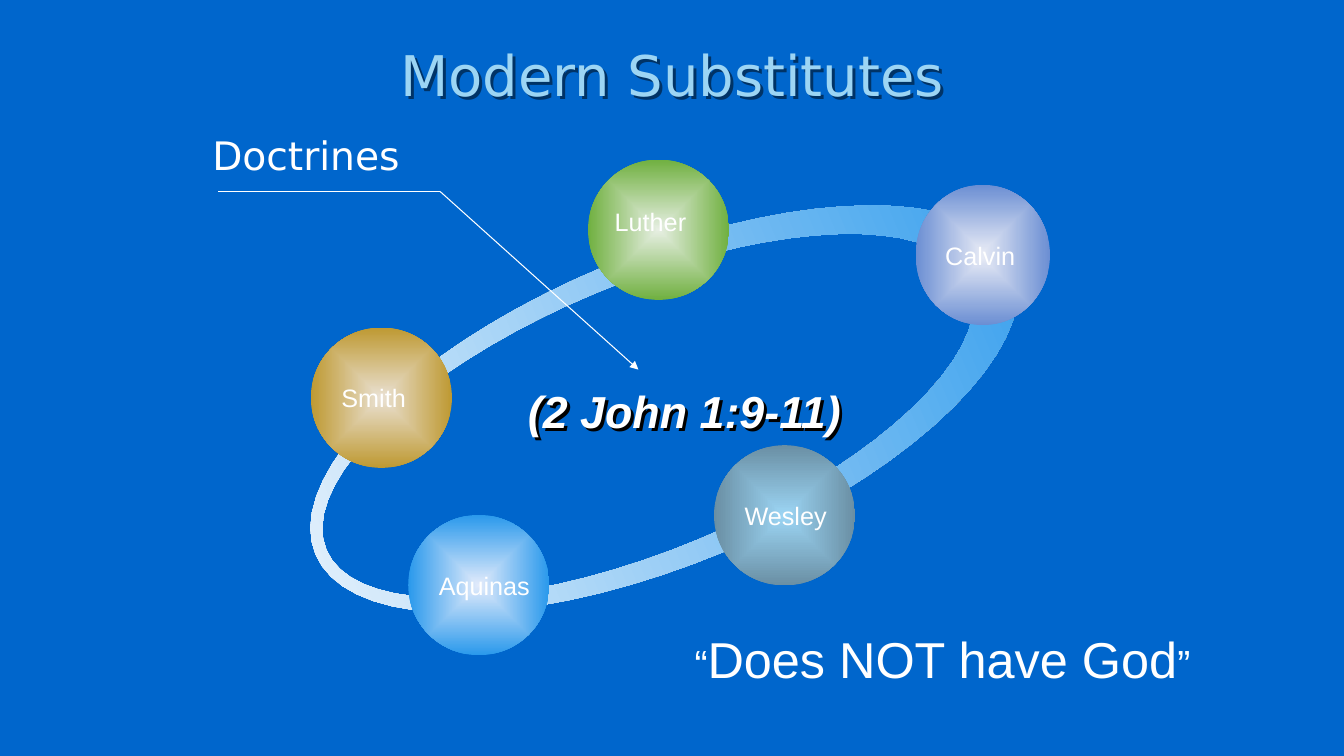
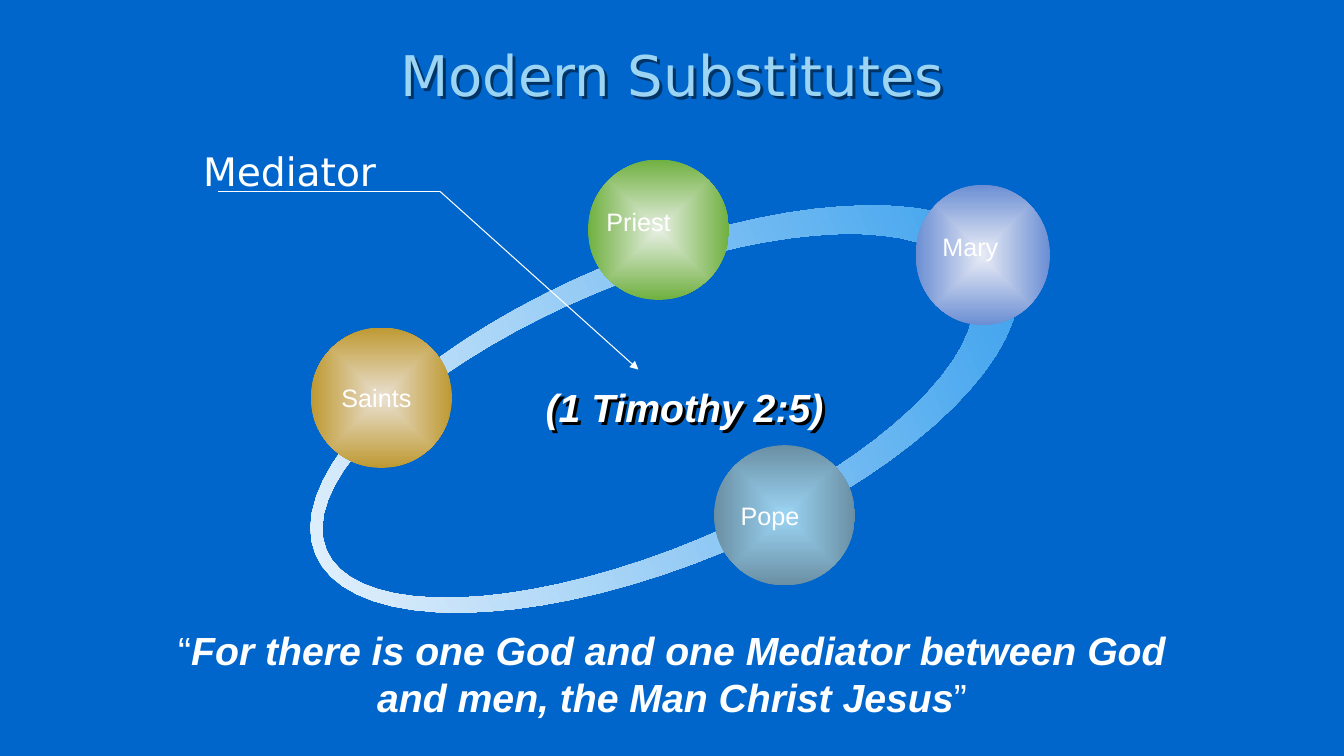
from collections import namedtuple
from math import cos, pi, sin

from lxml import etree
from pptx import Presentation
from pptx.dml.color import RGBColor
from pptx.enum.shapes import MSO_CONNECTOR, MSO_SHAPE
from pptx.enum.text import MSO_ANCHOR, MSO_AUTO_SIZE, PP_ALIGN
from pptx.oxml.ns import qn
from pptx.util import Inches, Pt

LEFT, CENTER = PP_ALIGN.LEFT, PP_ALIGN.CENTER
MIDDLE = MSO_ANCHOR.MIDDLE
GROW = MSO_AUTO_SIZE.SHAPE_TO_FIT_TEXT
OVAL = MSO_SHAPE.OVAL
STRAIGHT = MSO_CONNECTOR.STRAIGHT

COLUMNS, ROWS = 160, 90
SLIDE_WIDTH, SLIDE_HEIGHT = Inches(13.33), Inches(7.5)
TITLE_ONLY = 5
TITLE_FONT, TEXT_FONT = "DejaVu Sans", "Arial"

BACKGROUND = RGBColor(0x00, 0x66, 0xCC)
TITLE_COLOR = RGBColor(0x9C, 0xD5, 0xF4)
TITLE_SHADOW = RGBColor(0x00, 0x33, 0x66)
WHITE = RGBColor(0xFF, 0xFF, 0xFF)
BLACK = RGBColor(0x00, 0x00, 0x00)
RING_LIGHT = RGBColor(0xF4, 0xF8, 0xFD)
SKY = RGBColor(0x2A, 0x99, 0xEC)
GREEN_LIGHT, GREEN = RGBColor(0xE7, 0xEF, 0xE3), RGBColor(0x70, 0xB0, 0x40)
GOLD_LIGHT, GOLD = RGBColor(0xEA, 0xE1, 0xD3), RGBColor(0xBE, 0x99, 0x32)
SKY_LIGHT = RGBColor(0xE2, 0xEB, 0xFB)
STEEL_LIGHT, STEEL = RGBColor(0x9C, 0xD5, 0xF4), RGBColor(0x6A, 0x8F, 0xA4)
VIOLET_LIGHT, VIOLET = RGBColor(0xE6, 0xEA, 0xF5), RGBColor(0x6B, 0x8E, 0xD3)

Sphere = namedtuple("Sphere", "column row width light dark")
TOP = Sphere(70, 19, 16.8, GREEN_LIGHT, GREEN)
WEST = Sphere(37, 39, 16.8, GOLD_LIGHT, GOLD)
SOUTH = Sphere(48.6, 61.3, 16.8, SKY_LIGHT, SKY)
EAST = Sphere(85, 53, 16.8, STEEL_LIGHT, STEEL)
NORTH_EAST = Sphere(109, 22, 16, VIOLET_LIGHT, VIOLET)
SPHERE_HEIGHT = 16.7

RING_CENTER = (79.1, 48.7)
RING_OUTER, RING_INNER = (45, 18.4), (41.5, 15.9)
RING_HOLE_SHIFT = -2.1
RING_ROTATION = 337.4
RING_STEPS = 72


def across(columns):
    """Turn grid columns into a length."""
    return int(SLIDE_WIDTH * columns / COLUMNS)


def down(rows):
    """Turn grid rows into a length."""
    return int(SLIDE_HEIGHT * rows / ROWS)


def grid_box(column, row, width, height):
    """Turn a grid cell range into left, top, width and height."""
    return across(column), down(row), across(width), down(height)


def style_font(font, size, color=WHITE, name=TEXT_FONT, strong=False):
    """Set size, colour and face; strong text is bold and italic."""
    font.name, font.size = name, Pt(size)
    font.bold = font.italic = strong
    font.color.rgb = color


def cast_shadow(shape, color):
    """Give the text of an unfilled shape a hard diagonal shadow."""
    effects = etree.SubElement(shape._element.spPr, qn("a:effectLst"))
    shadow = etree.SubElement(effects, qn("a:outerShdw"), dist="38100", dir="2700000",
                              algn="ctr", rotWithShape="0")
    etree.SubElement(shadow, qn("a:srgbClr"), val=str(color))


def fill_gradient(shape, light, dark):
    """Fill a shape from light to dark, left to right, without outline."""
    shape.shadow.inherit = False
    shape.line.fill.background()
    shape.fill.gradient()
    shape.fill.gradient_angle = 0
    for stop, color, position in zip(shape.fill.gradient_stops, (light, dark), (0, 1)):
        stop.color.rgb = color
        stop.position = position


def add_title(page, text):
    """Fill the title placeholder."""
    title = page.shapes.title
    title.text_frame.text = text
    title.text_frame.vertical_anchor = MIDDLE
    para = title.text_frame.paragraphs[0]
    para.alignment = CENTER
    style_font(para.font, 40, TITLE_COLOR, TITLE_FONT)
    cast_shadow(title, TITLE_SHADOW)


def add_label(page, text, box, size=18, name=TEXT_FONT, align=LEFT, strong=False, wrap=True):
    """Add a one-style text box and return it."""
    label = page.shapes.add_textbox(*grid_box(*box))
    frame = label.text_frame
    frame.word_wrap, frame.auto_size = wrap, GROW
    para = frame.paragraphs[0]
    para.text, para.alignment = text, align
    style_font(para.font, size, name=name, strong=strong)
    return label


def add_quote(page, text, box, size, align=LEFT, strong=False):
    """Add a quotation whose marks stay small and plain."""
    para = add_label(page, "", box, size, align=align).text_frame.paragraphs[0]
    for part, part_size, part_strong in (("“", 28, False), (text, size, strong), ("”", 28, False)):
        span = para.add_run()
        span.text = part
        style_font(span.font, part_size, strong=part_strong)


def ellipse_points(radii, shift=0):
    """List the points of an ellipse around the ring's centre."""
    column, row = RING_CENTER
    angles = [2 * pi * step / RING_STEPS for step in range(RING_STEPS)]
    return [(across(column + shift + radii[0] * cos(angle)), down(row + radii[1] * sin(angle)))
            for angle in angles]


def add_ring(page):
    """Add the tilted ring that widens to the right."""
    outer = ellipse_points(RING_OUTER)
    inner = ellipse_points(RING_INNER, RING_HOLE_SHIFT)[::-1]
    builder = page.shapes.build_freeform(*outer[0], scale=1.0)
    builder.add_line_segments(outer[1:], close=True)
    builder.move_to(*inner[0])
    builder.add_line_segments(inner[1:], close=True)
    ring = builder.convert_to_shape()
    fill_gradient(ring, RING_LIGHT, SKY)
    ring.rotation = RING_ROTATION


def add_sphere(page, sphere, text=""):
    """Add a ball shaded from its centre, with an optional name."""
    ball = page.shapes.add_shape(
        OVAL, *grid_box(sphere.column, sphere.row, sphere.width, SPHERE_HEIGHT))
    fill_gradient(ball, sphere.light, sphere.dark)
    linear = ball._element.spPr.find(qn("a:gradFill")).find(qn("a:lin"))
    radial = etree.Element(qn("a:path"), path="shape")
    etree.SubElement(radial, qn("a:fillToRect"), l="50000", t="50000", r="50000", b="50000")
    linear.getparent().replace(linear, radial)
    if text:
        frame = ball.text_frame
        frame.word_wrap, frame.vertical_anchor = False, MIDDLE
        para = frame.paragraphs[0]
        para.text, para.alignment = text, LEFT
        style_font(para.font, 18)


def add_line(page, start, end, arrow=False):
    """Add a thin white line, with an arrowhead if asked."""
    line = page.shapes.add_connector(STRAIGHT, across(start[0]), down(start[1]),
                                     across(end[0]), down(end[1]))
    line.line.color.rgb, line.line.width = WHITE, Pt(0.75)
    if arrow:
        etree.SubElement(line.line._get_or_add_ln(), qn("a:tailEnd"), type="triangle")
    etree.SubElement(line._element.spPr, qn("a:effectLst"))


def add_diagram(deck, spheres, verse, verse_size):
    """Add a page with the title, ring, named spheres, verse and pointer."""
    page = deck.slides.add_slide(deck.slide_layouts[TITLE_ONLY])
    add_title(page, "Modern Substitutes")
    add_ring(page)
    for sphere, text in spheres:
        add_sphere(page, sphere, text)
    cast_shadow(add_label(page, verse, (61, 45.1, 41, verse_size * 0.24), verse_size,
                          align=CENTER, strong=True), BLACK)
    elbow = (52.4, 22.8)
    add_line(page, elbow, (76, 44), arrow=True)
    add_line(page, elbow, (26, 22.8))
    return page


def add_doctrines(deck):
    """Add the page about doctrines."""
    spheres = ((TOP, ""), (WEST, "Smith"), (SOUTH, "Aquinas"), (EAST, "Wesley"),
               (NORTH_EAST, "Calvin"))
    page = add_diagram(deck, spheres, "(2 John 1:9-11)", 32)
    add_label(page, "Doctrines", (24.1, 15, 25.8, 6.8), 28, TITLE_FONT)
    add_quote(page, "Does NOT have God", (81.5, 74.2, 71.8, 8.5), 36)
    add_label(page, "Luther", (72, 24, 13, 4.8))


def add_mediator(deck):
    """Add the page about the mediator."""
    spheres = ((TOP, ""), (WEST, "Saints"), (EAST, ""), (NORTH_EAST, ""))
    page = add_diagram(deck, spheres, "(1 Timothy 2:5)", 28)
    add_label(page, "Mediator", (23, 17, 23, 6.8), 28, TITLE_FONT, wrap=False)
    add_quote(page, "For there is one God and one Mediator between God and men, the Man Christ Jesus",
              (20, 74, 120, 12.5), 28, CENTER, strong=True)
    for text, column, row, width in (("Priest", 71, 24, 17), ("Mary", 111, 27, 12),
                                     ("Pope", 87, 59, 15)):
        add_label(page, text, (column, row, width, 4.8))


def set_up_deck():
    """Create the deck with its shared background and title place."""
    deck = Presentation()
    deck.slide_width, deck.slide_height = SLIDE_WIDTH, SLIDE_HEIGHT
    background = deck.slide_master.background.fill
    background.solid()
    background.fore_color.rgb = BACKGROUND
    title = deck.slide_layouts[TITLE_ONLY].placeholders[0]
    title.left, title.top, title.width, title.height = grid_box(8, 3.6, 144, 10.4)
    return deck


def main():
    """Build and save the deck."""
    deck = set_up_deck()
    add_doctrines(deck)
    add_mediator(deck)
    deck.save("out.pptx")


if __name__ == "__main__":
    main()
